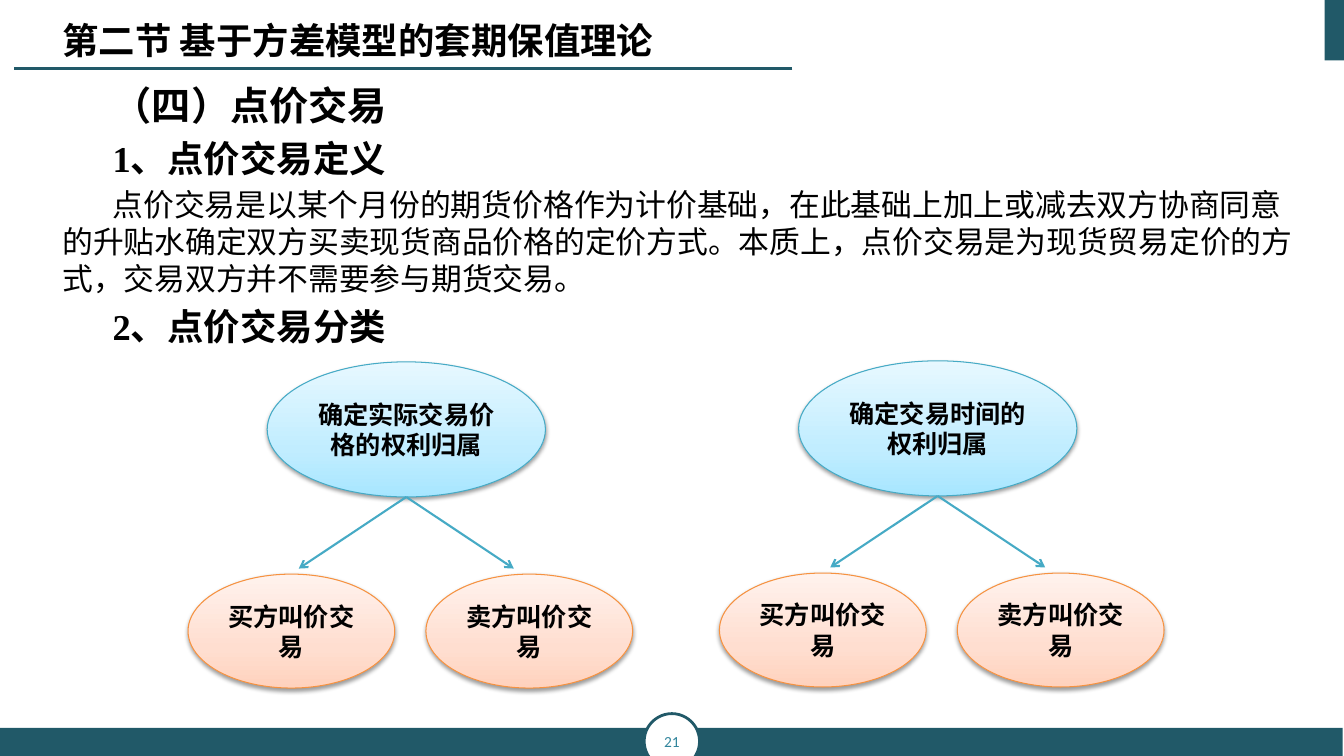
from dataclasses import dataclass

import pptx
import pptx.dml.color
import pptx.enum.shapes
import pptx.enum.text
import pptx.oxml
import pptx.oxml.ns
import pptx.util
from lxml import etree

Pt = pptx.util.Pt
SHAPE = pptx.enum.shapes.MSO_SHAPE
ALIGN = pptx.enum.text.PP_ALIGN
ANCHOR = pptx.enum.text.MSO_ANCHOR
DRAWING_NS = pptx.oxml.ns.nsdecls("a")


@dataclass(frozen=True)
class Tint:
    edge: str
    stops: tuple[tuple[int, str], ...]


@dataclass(frozen=True)
class Theme:
    teal: str = "215968"
    page_number: str = "31859C"
    white: str = "FFFFFF"
    black: str = "000000"
    right: Tint = Tint("46AAC5", ((0, "A7E6FF"), (35, "C1EDFF"), (100, "E7F8FF")))
    pricing: Tint = Tint("F69240", ((0, "FFD2BD"), (35, "FFDED0"), (100, "FFF2ED")))
    cjk: str = "Noto Sans CJK SC"
    serif: str = "Times New Roman"
    sans: str = "Calibri"
    section: int = 28
    heading: int = 26
    prose: int = 22
    node: int = 18
    number: int = 11


@dataclass(frozen=True)
class Area:
    """A box in percent of the slide's width and height."""
    left: float
    top: float
    width: float
    height: float


@dataclass(frozen=True)
class Passage:
    text: str
    size: int
    bold: bool = True


@dataclass(frozen=True)
class Branch:
    """One right and the two pricing modes under it."""
    text: str
    center: float
    top: float


@dataclass(frozen=True)
class Mode:
    text: str
    center_shift: float
    arrow_shift: float


THEME = Theme()
PASSAGES = (
    Passage("（四）点价交易", THEME.section),
    Passage("1、点价交易定义", THEME.heading),
    Passage("点价交易是以某个月份的期货价格作为计价基础，在此基础上加上或减去双方协商同意"
            "的升贴水确定双方买卖现货商品价格的定价方式。本质上，点价交易是为现货贸易定价的方"
            "式，交易双方并不需要参与期货交易。", THEME.prose, bold=False),
    Passage("2、点价交易分类", THEME.heading),
)
BRANCHES = (Branch("确定实际交易价格的权利归属", 30.23, 47.87),
            Branch("确定交易时间的权利归属", 69.77, 47.73))
MODES = (Mode("买方叫价交易", -8.55, -8), Mode("卖方叫价交易", 9.15, 8))
RIGHT_WIDTH, RIGHT_HEIGHT = 20.7, 17.87
MODE_WIDTH, MODE_HEIGHT = 15.38, 15.07
MODE_DROP, ARROW_DROP = 28.07, 9.47

deck = pptx.Presentation()
deck.slide_width = pptx.util.Inches(13.33)
deck.slide_height = pptx.util.Inches(7.5)
slide = deck.slides.add_slide(deck.slide_layouts[6])


def across(share: float) -> int:
    return round(deck.slide_width * share / 100)


def down(share: float) -> int:
    return round(deck.slide_height * share / 100)


def place(area: Area) -> tuple[int, int, int, int]:
    return across(area.left), down(area.top), across(area.width), down(area.height)


def rgb(color: str) -> pptx.dml.color.RGBColor:
    return pptx.dml.color.RGBColor.from_string(color)


def write(paragraph, text: str, *, size: int, font: str, color: str = THEME.black,
          bold: bool = False, align=ALIGN.LEFT, indent: float = 0, before: float = 0) -> None:
    paragraph.alignment = align
    if indent:
        paragraph._p.get_or_add_pPr().set("indent", str(across(indent)))
    if before:
        paragraph.space_before = Pt(before)
    run = paragraph.add_run()
    run.text = text
    run.font.size, run.font.bold, run.font.name = Pt(size), bold, font
    run.font.color.rgb = rgb(color)
    east_asian = etree.SubElement(run._r.get_or_add_rPr(), pptx.oxml.ns.qn("a:ea"))
    east_asian.set("typeface", THEME.cjk)


def add_solid(kind, area: Area, fill: str, edge: str | None = None):
    solid = slide.shapes.add_shape(kind, *place(area))
    solid.shadow.inherit = False
    solid.fill.solid()
    solid.fill.fore_color.rgb = rgb(fill)
    if edge:
        solid.line.color.rgb = rgb(edge)
        solid.line.width = Pt(2)
    else:
        solid.line.fill.background()
    return solid


def add_text_area(area: Area):
    frame = slide.shapes.add_textbox(*place(area)).text_frame
    frame.word_wrap = True
    return frame


def add_line(start: tuple[float, float], end: tuple[float, float], color: str,
             arrow: bool = False) -> None:
    line = slide.shapes.add_connector(
        pptx.enum.shapes.MSO_CONNECTOR.STRAIGHT,
        across(start[0]), down(start[1]), across(end[0]), down(end[1]))
    line.line.color.rgb = rgb(color)
    line.line.width = Pt(1.5)
    if arrow:
        etree.SubElement(line.line._get_or_add_ln(),
                         pptx.oxml.ns.qn("a:tailEnd")).set("type", "arrow")
    etree.SubElement(line._element.spPr, pptx.oxml.ns.qn("a:effectLst"))


def add_node(text: str, area: Area, tint: Tint) -> None:
    """Add an oval with an upward gradient and a soft shadow below it."""
    oval = add_solid(SHAPE.OVAL, area, THEME.white, tint.edge)
    oval.line.width = Pt(0.75)
    stops = "".join(f'<a:gs pos="{at * 1000}"><a:srgbClr val="{color}"/></a:gs>'
                    for at, color in tint.stops)
    properties = oval._element.spPr
    properties.replace(properties.find(pptx.oxml.ns.qn("a:solidFill")), pptx.oxml.parse_xml(
        f'<a:gradFill {DRAWING_NS} rotWithShape="1"><a:gsLst>{stops}</a:gsLst>'
        '<a:lin ang="16200000" scaled="0"/></a:gradFill>'))
    properties.find(pptx.oxml.ns.qn("a:effectLst")).append(pptx.oxml.parse_xml(
        f'<a:outerShdw {DRAWING_NS} blurRad="{Pt(3.1)}" dist="{Pt(1.6)}" dir="5400000" '
        f'rotWithShape="0"><a:srgbClr val="{THEME.black}"><a:alpha val="38000"/>'
        '</a:srgbClr></a:outerShdw>'))
    oval.text_frame.vertical_anchor = ANCHOR.MIDDLE
    write(oval.text_frame.paragraphs[0], text, size=THEME.node, font=THEME.sans,
          bold=True, align=ALIGN.CENTER)


def add_branch(branch: Branch) -> None:
    add_node(branch.text, Area(branch.center - RIGHT_WIDTH / 2, branch.top,
                               RIGHT_WIDTH, RIGHT_HEIGHT), THEME.right)
    fork = branch.top + RIGHT_HEIGHT
    for mode in MODES:
        add_line((branch.center, fork), (branch.center + mode.arrow_shift, fork + ARROW_DROP),
                 THEME.right.edge, arrow=True)
        add_node(mode.text, Area(branch.center + mode.center_shift - MODE_WIDTH / 2,
                                 branch.top + MODE_DROP, MODE_WIDTH, MODE_HEIGHT), THEME.pricing)


def main() -> None:
    add_solid(SHAPE.RECTANGLE, Area(98.55, 0, 1.45, 8), THEME.teal)
    add_solid(SHAPE.RECTANGLE, Area(0, 96.27, 99.9, 3.73), THEME.teal)
    badge = add_solid(SHAPE.OVAL, Area(47.93, 94.4, 4.12, 7.33), THEME.white, THEME.teal)
    badge.text_frame.vertical_anchor = ANCHOR.MIDDLE
    write(badge.text_frame.paragraphs[0], "21", size=THEME.number, font=THEME.sans,
          color=THEME.page_number, align=ALIGN.CENTER)
    add_line((58.95, 9.07), (1.05, 9.07), THEME.teal)

    body = add_text_area(Area(3.9, 10.13, 93.9, 82.13))
    for index, passage in enumerate(PASSAGES):
        paragraph = body.add_paragraph() if index else body.paragraphs[0]
        write(paragraph, passage.text, size=passage.size, font=THEME.serif, bold=passage.bold,
              indent=3.75, before=0.2 * passage.size if index else 0)

    title = add_text_area(Area(3.9, 1.73, 58.5, 7.2))
    write(title.paragraphs[0], "第二节 基于方差模型的套期保值理论", size=THEME.heading,
          font=THEME.cjk, bold=True)
    for branch in BRANCHES:
        add_branch(branch)
    deck.save("out.pptx")


if __name__ == "__main__":
    main()
